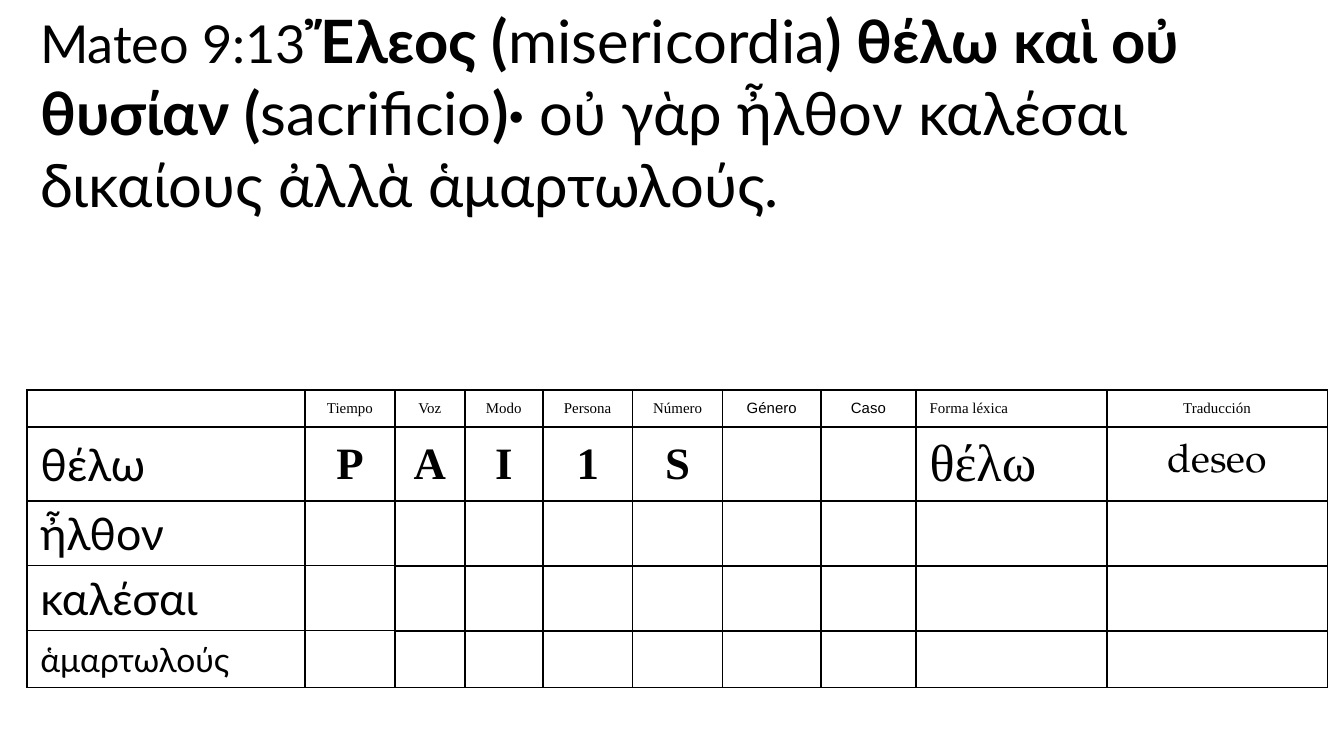
"""Build a Greek parsing exercise slide on Mateo 9:13."""
from dataclasses import dataclass

from lxml import etree
from pptx import Presentation
from pptx import util as u
from pptx.dml.color import RGBColor
from pptx.enum import text
from pptx.oxml import ns


@dataclass(frozen=True)
class Theme:
    """Colours, fonts and type sizes of the slide."""
    ink: str = "000000"
    sans: str = "Lato"
    serif: str = "Times New Roman"
    label: str = "Arial"
    book: str = "TeX Gyre Pagella"
    tiny: int = 8
    small: int = 18
    gloss: int = 21
    word: int = 24
    large: int = 28
    verse: int = 32
    thin: float = 0.75
    rule: float = 1


@dataclass(frozen=True)
class Span:
    """A stretch of text in one type style."""
    words: str
    font: str
    size: int
    bold: bool = False


class Page:
    """Draws text and tables on one slide in one theme."""

    def __init__(self, deck, theme):
        """Add a blank slide to the deck."""
        self.theme = theme
        self.page = deck.slides.add_slide(deck.slide_layouts[6])

    def add_spans(self, para, spans):
        """Add the spans to a paragraph run by run."""
        for span in spans:
            run = para.add_run()
            run.text = span.words
            run.font.name = span.font
            run.font.size = u.Pt(span.size)
            run.font.bold = span.bold
            run.font.color.rgb = RGBColor.from_string(self.theme.ink)

    def add_text(self, left, top, width, height, spans):
        """Add a wrapping text box."""
        box = self.page.shapes.add_textbox(u.Pt(left), u.Pt(top), u.Pt(width), u.Pt(height))
        box.text_frame.word_wrap = True
        self.add_spans(box.text_frame.paragraphs[0], spans)

    def add_border(self, cell, side, width):
        """Draw one edge of a cell."""
        properties = cell._tc.get_or_add_tcPr()
        line = etree.SubElement(properties, ns.qn(f"a:ln{side}"), w=str(u.Pt(width)))
        fill = etree.SubElement(line, ns.qn("a:solidFill"))
        etree.SubElement(fill, ns.qn("a:srgbClr"), val=self.theme.ink)

    def fill_cell(self, cell, span, centred, widths):
        """Format one cell and add its span, if any."""
        for side, width in widths.items():
            self.add_border(cell, side, width)
        cell.fill.background()
        cell.vertical_anchor = text.MSO_ANCHOR.MIDDLE
        cell.margin_left = cell.margin_right = u.Pt(7.2)
        cell.margin_top = cell.margin_bottom = u.Pt(3)
        para = cell.text_frame.paragraphs[0]
        if span:
            para.alignment = text.PP_ALIGN.CENTER if centred else text.PP_ALIGN.LEFT
            self.add_spans(para, [span])
        else:
            size = str(self.theme.tiny * 100)
            etree.SubElement(para._p, ns.qn("a:endParaRPr"), sz=size)

    def add_table(self, left, top, columns, heights, rows, left_aligned):
        """Add a ruled table whose first two columns have thin inner rules."""
        frame = self.page.shapes.add_table(
            len(heights), len(columns), u.Pt(left), u.Pt(top),
            u.Pt(sum(columns)), u.Pt(sum(heights)))
        table = frame.table
        table.first_row = table.horz_banding = False
        for column, width in zip(table.columns, columns):
            column.width = u.Pt(width)
        for row, height in zip(table.rows, heights):
            row.height = u.Pt(height)
        rule = self.theme.rule
        for r in range(len(heights)):
            for c in range(len(columns)):
                inner = self.theme.thin if c < 2 else rule
                widths = {"L": rule, "R": rule, "T": inner if r else rule, "B": inner}
                self.fill_cell(table.cell(r, c), rows[r].get(c), c not in left_aligned, widths)


def main():
    """Build and save the slide."""
    deck = Presentation()
    deck.slide_width, deck.slide_height = u.Pt(720), u.Pt(405)
    theme = Theme()
    page = Page(deck, theme)

    verse = [
        (" Ἔλεος (", True), ("misericordia", False),
        (") θέλω καὶ οὐ θυσίαν (", True), ("sacrificio", False), (")· ", True),
        ("οὐ γὰρ ἦλθον καλέσαι δικαίους ἀλλὰ ἁμαρτωλούς.", False),
    ]
    spans = [Span("Mateo 9:13", theme.sans, theme.large)]
    spans += [Span(words, theme.sans, theme.verse, bold) for words, bold in verse]
    page.add_text(14.4, -1.4, 692, 124, spans)

    headings = ["Tiempo", "Voz", "Modo", "Persona", "Número", "Género", "Caso",
                "Forma léxica", "Traducción"]
    header = {
        c: Span(words, theme.label if words in ("Género", "Caso") else theme.serif, theme.tiny)
        for c, words in enumerate(headings, 1)
    }
    words = [("θέλω", theme.word), ("ἦλθον", theme.word),
             ("καλέσαι", theme.word), ("ἁμαρτωλούς", theme.small)]
    rows = [header] + [{0: Span(word, theme.sans, size)} for word, size in words]
    rows[1].update({c: Span(code, theme.serif, theme.word, True)
                    for c, code in enumerate("PAI1S", 1)})
    rows[1][8] = Span("θέλω", theme.serif, theme.large)
    rows[1][9] = Span("deseo", theme.book, theme.gloss)

    columns = [149, 48.2, 37.4, 41.8, 48.2, 48.2, 52.6, 51.1, 102.2, 118.1]
    heights = [19.8, 39.1, 34.2, 34.2, 30.5]
    page.add_table(14.4, 209, columns, heights, rows, left_aligned={0, 8})
    deck.save("out.pptx")


if __name__ == "__main__":
    main()
